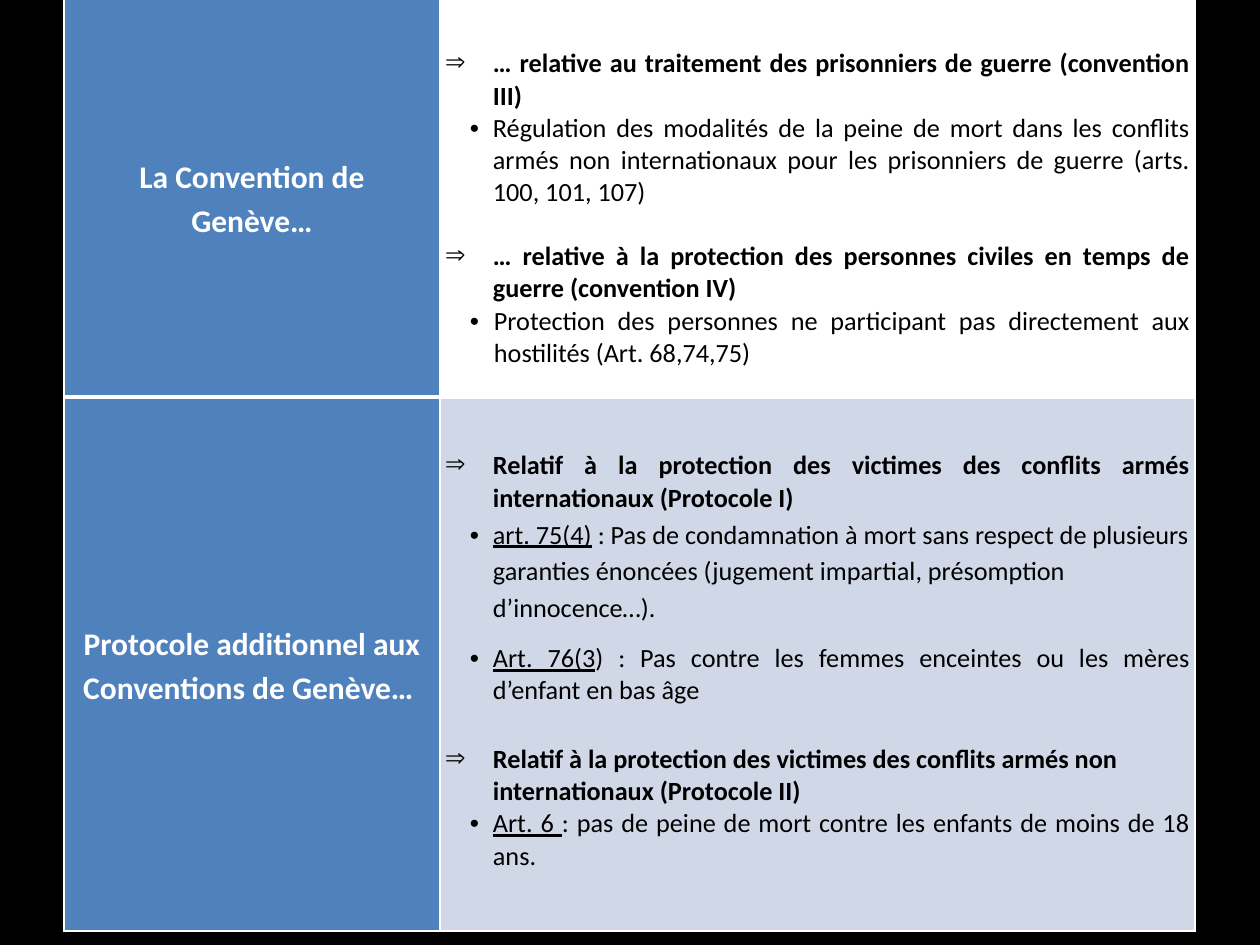
from lxml.etree import SubElement as Sub
from pptx import Presentation
from pptx.dml.color import RGBColor as Rgb
from pptx.enum.text import MSO_ANCHOR as Anchor, PP_ALIGN as Align
from pptx.oxml.ns import qn
from pptx.util import Emu, Pt

SCALE = 914400 / 126
COLORS = {"black": "000000", "white": "FFFFFF", "blue": "4F81BD", "pale": "D0D8E8"}
FONT = "Calibri"
ARROW = {"mark": "⇒", "left": 48, "hang": 48, "bold": True, "align": Align.JUSTIFY}
DOT = {"mark": "•", "left": 48, "hang": 23, "align": Align.JUSTIFY}
HEAD = {"size": 18, "bold": True, "color": "white", "line": 1.15, "align": Align.CENTER}


def px(num):
    return Emu(round(num * SCALE))


def rgb(name):
    return Rgb.from_string(COLORS[name])


def write(para, *runs, size=15, bold=False, color="black", align=Align.LEFT,
          line=1, before=0, after=0, mark=None, left=0, hang=0):
    """Fill a paragraph; a run given as a one-item list is underlined."""
    para.alignment, para.line_spacing = align, line
    para.space_before, para.space_after = Pt(before), Pt(after)
    for item in runs:
        under = isinstance(item, list)
        run = para.add_run()
        run.text = item[0] if under else item
        font = run.font
        font.name, font.size, font.bold = FONT, Pt(size), bold
        font.underline = under
        font.color.rgb = rgb(color)
    if mark:
        props = para._p.get_or_add_pPr()
        props.set("marL", str(px(left)))
        props.set("indent", str(-px(hang)))
        Sub(props, qn("a:buFont"), typeface="Arial" if mark == "•" else "Symbol")
        Sub(props, qn("a:buChar"), char=mark)


class Deck:
    def __init__(self, wide, high):
        self.show = Presentation()
        self.show.slide_width, self.show.slide_height = px(wide), px(high)
        self.slide = self.show.slides.add_slide(self.show.slide_layouts[6])

    def back(self, color):
        fill = self.slide.background.fill
        fill.solid()
        fill.fore_color.rgb = rgb(color)

    def table(self, left, top, cols, rows):
        shape = self.slide.shapes.add_table(
            len(rows), len(cols), px(left), px(top), px(sum(cols)), px(sum(rows)))
        grid = shape.table
        grid.first_row = grid.horz_banding = False
        for col, wide in zip(grid.columns, cols):
            col.width = px(wide)
        for row, high in zip(grid.rows, rows):
            row.height = px(high)
        return grid

    def cell(self, cell, fill, edges, paras, top=None):
        """Edges maps a side to its width; top sets text from the upper edge."""
        cell.margin_left = cell.margin_right = px(5)
        cell.margin_top, cell.margin_bottom = px(top or 0), 0
        cell.vertical_anchor = Anchor.TOP if top else Anchor.MIDDLE
        props = cell._tc.get_or_add_tcPr()
        for side, width in edges.items():
            edge = Sub(props, qn("a:ln" + side), w=str(Pt(width)))
            Sub(Sub(edge, qn("a:solidFill")), qn("a:srgbClr"), val=COLORS["white"])
        cell.fill.solid()
        cell.fill.fore_color.rgb = rgb(fill)
        frame = cell.text_frame
        for num, (runs, style) in enumerate(paras):
            para = frame.add_paragraph() if num else frame.paragraphs[0]
            write(para, *runs, **style)


TREATY = [
    (["… relative au traitement des prisonniers de guerre (convention III)"], ARROW),
    (["Régulation des modalités de la peine de mort dans les conflits armés non "
      "internationaux pour les prisonniers de guerre (arts. 100, 101, 107)"], DOT),
    (["… relative à la protection des personnes civiles en temps de guerre "
      "(convention IV)"], ARROW | {"before": 18.3}),
    (["Protection des personnes ne participant pas directement aux hostilités "
      "(Art. 68,74,75)"], DOT | {"left": 49, "hang": 24}),
]
ADDED = [
    (["Relatif à la protection des victimes des conflits armés internationaux "
      "(Protocole I)"], ARROW),
    ([["art. 75(4)"], " : Pas de condamnation à mort sans respect de plusieurs "
      "garanties énoncées (jugement impartial, présomption d’innocence…)."],
     DOT | {"align": Align.LEFT, "line": 1.15, "after": 10}),
    ([["Art. 76(3"], ") : Pas contre les femmes enceintes ou les mères d’enfant "
      "en bas âge"], DOT),
    (["Relatif à la protection des victimes des conflits armés non internationaux "
      "(Protocole II)"], ARROW | {"align": Align.LEFT, "before": 21}),
    ([["Art. 6 "], ": pas de peine de mort contre les enfants de moins de 18 ans."],
     DOT),
]


def main():
    deck = Deck(1260, 945)
    deck.back("black")
    grid = deck.table(64, -4, [376, 755], [401, 534])
    upper = {"L": 1, "R": 1, "T": 1, "B": 3}
    lower = {"L": 1, "R": 1, "T": 3, "B": 1}
    deck.cell(grid.cell(0, 0), "blue", upper,
              [(["La Convention de"], HEAD), (["Genève…"], HEAD)])
    deck.cell(grid.cell(0, 1), "white", upper, TREATY, top=52)
    deck.cell(grid.cell(1, 0), "blue", lower,
              [(["Protocole additionnel aux Conventions de Genève… "], HEAD)])
    deck.cell(grid.cell(1, 1), "pale", lower, ADDED, top=53)
    deck.show.save("out.pptx")


if __name__ == "__main__":
    main()
